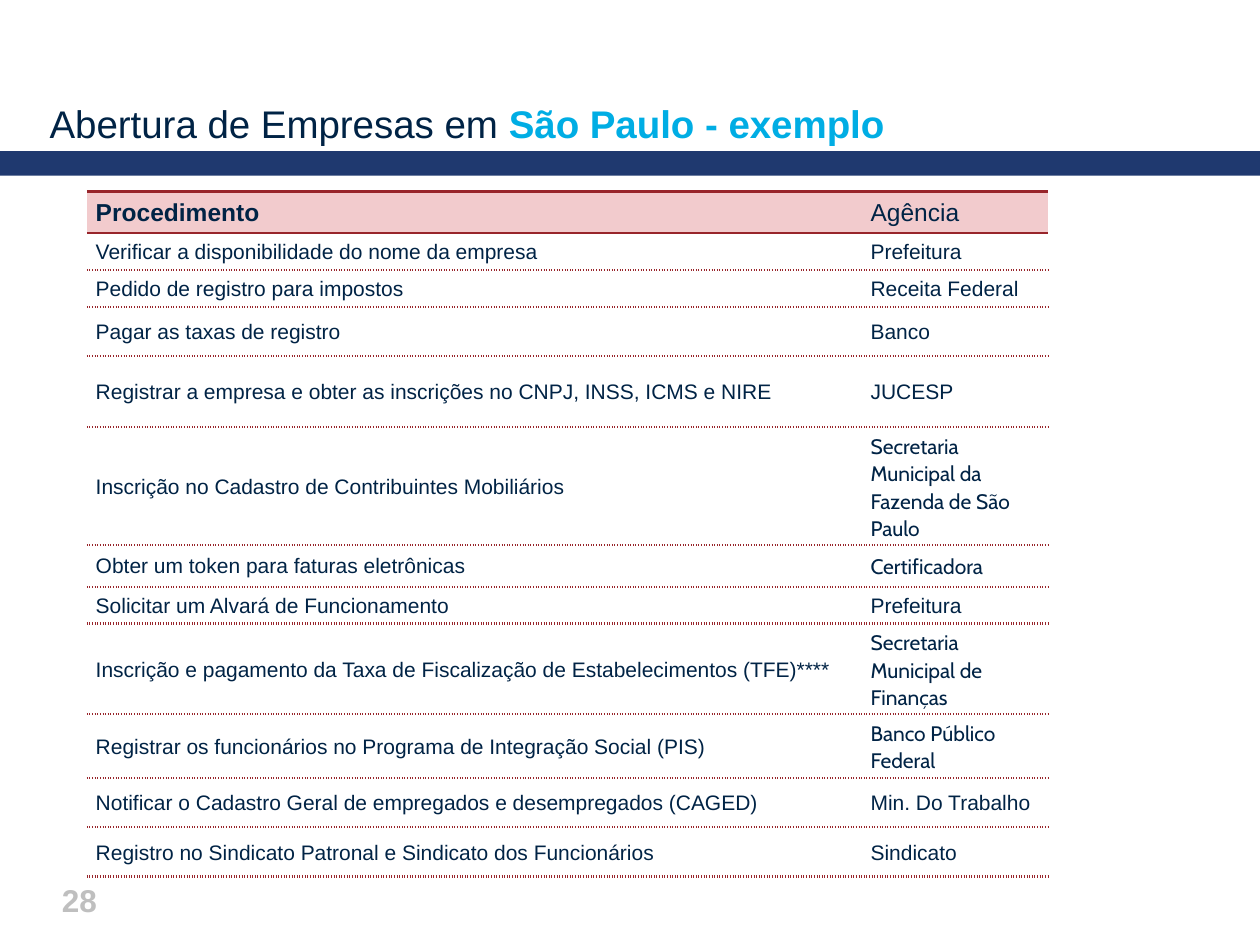
from dataclasses import dataclass

from lxml import etree
from pptx import Presentation
from pptx.dml.color import RGBColor
from pptx.enum import shapes, text
from pptx.oxml.ns import qn
from pptx.util import Cm, Pt


@dataclass(frozen=True)
class Theme:
    ink: str = "002345"
    accent: str = "00ADE4"
    bar: str = "1F396F"
    header_fill: str = "F2CBCD"
    rule: str = "98252B"
    muted: str = "BFBFBF"
    font: str = "Arial"
    alt_font: str = "Cabin"
    title_size: int = 22
    header_size: int = 14
    body_size: int = 12
    number_size: int = 18
    rule_width: float = 1.5


THEME = Theme()

# Procedure, agency, agency font, row height in cm
ROWS = [
    ("Procedimento", "Agência", THEME.font, 0.66),
    ("Verificar a disponibilidade do nome da empresa", "Prefeitura", THEME.font, 0.74),
    ("Pedido de registro para impostos", "Receita Federal", THEME.font, 0.58),
    ("Pagar as taxas de registro", "Banco", THEME.font, 0.99),
    ("Registrar a empresa e obter as inscrições no CNPJ, INSS, ICMS e NIRE",
     "JUCESP", THEME.font, 1.44),
    ("Inscrição no Cadastro de Contribuintes Mobiliários",
     "Secretaria Municipal da Fazenda de São Paulo", THEME.alt_font, 1.98),
    ("Obter um token para faturas eletrônicas", "Certificadora", THEME.alt_font, 0.84),
    ("Solicitar um Alvará de Funcionamento", "Prefeitura", THEME.font, 0.71),
    ("Inscrição e pagamento da Taxa de Fiscalização de Estabelecimentos (TFE)****",
     "Secretaria Municipal de Finanças", THEME.alt_font, 1.73),
    ("Registrar os funcionários no Programa de Integração Social (PIS)",
     "Banco Público Federal", THEME.alt_font, 1.07),
    ("Notificar o Cadastro Geral de empregados e desempregados (CAGED)",
     "Min. Do Trabalho", THEME.font, 0.99),
    ("Registro no Sindicato Patronal e Sindicato dos Funcionários",
     "Sindicato", THEME.font, 0.99),
]
COLUMN_SHARES = (0.806, 0.194)


def style_run(r, size, color, bold=False, font=THEME.font):
    r.font.name = font
    r.font.size = Pt(size)
    r.font.bold = bold
    r.font.color.rgb = RGBColor.from_string(color)


def add_bar(slide, x, y, w, h):
    sp = slide.shapes.add_shape(shapes.MSO_SHAPE.RECTANGLE, x, y, w, h)
    sp.shadow.inherit = False
    sp.fill.solid()
    sp.fill.fore_color.rgb = RGBColor.from_string(THEME.bar)
    sp.line.fill.background()


def fill_title(slide, x, y, w, h):
    sp = slide.shapes.title
    sp.left, sp.top, sp.width, sp.height = x, y, w, h
    tf = sp.text_frame
    tf.margin_left = tf.margin_right = tf.margin_top = tf.margin_bottom = 0
    tf.word_wrap = True
    tf.auto_size = text.MSO_AUTO_SIZE.NONE
    tf.vertical_anchor = text.MSO_ANCHOR.BOTTOM
    p = tf.paragraphs[0]
    p.alignment = text.PP_ALIGN.LEFT
    for words, color, bold in (("Abertura de Empresas em ", THEME.ink, False),
                               ("São Paulo - exemplo", THEME.accent, True)):
        r = p.add_run()
        r.text = words
        style_run(r, THEME.title_size, color, bold)


def add_page_number(slide, x, y, w, h):
    tf = slide.shapes.add_textbox(x, y, w, h).text_frame
    tf.word_wrap = True
    tf.text = "28"
    style_run(tf.paragraphs[0].runs[0], THEME.number_size, THEME.muted, True)


def set_borders(cell, top, bottom):
    """Rule the top and bottom with the given dash styles; leave the sides open."""
    tc_pr = cell._tc.get_or_add_tcPr()
    for side, dash in (("L", None), ("R", None), ("T", top), ("B", bottom)):
        ln = etree.SubElement(tc_pr, qn(f"a:ln{side}"))
        if dash is None:
            etree.SubElement(ln, qn("a:noFill"))
            continue
        ln.set("w", str(Pt(THEME.rule_width)))
        fill = etree.SubElement(ln, qn("a:solidFill"))
        etree.SubElement(fill, qn("a:srgbClr"), val=THEME.rule)
        etree.SubElement(ln, qn("a:prstDash"), val=dash)


def fill_cell(cell, words, font, row, col):
    is_header = row == 0
    set_borders(cell, "solid" if row <= 1 else "sysDot",
                "solid" if is_header else "sysDot")
    if is_header:
        cell.fill.solid()
        cell.fill.fore_color.rgb = RGBColor.from_string(THEME.header_fill)
    else:
        cell.fill.background()
    cell.vertical_anchor = text.MSO_ANCHOR.MIDDLE
    cell.margin_left = cell.margin_right = Cm(0.18)
    cell.margin_top = cell.margin_bottom = Cm(0.1)
    cell.text = words
    p = cell.text_frame.paragraphs[0]
    p.line_spacing = 1.07
    if col == 0 and not is_header:
        p.space_after = Pt(7.5)
    size = THEME.header_size if is_header else THEME.body_size
    style_run(p.runs[0], size, THEME.ink, is_header and col == 0, font)


def add_procedure_table(slide, x, y, w, h):
    table = slide.shapes.add_table(len(ROWS), len(COLUMN_SHARES), x, y, w, h).table
    table.first_row = table.horz_banding = False
    for column, share in zip(table.columns, COLUMN_SHARES):
        column.width = int(w * share)
    for i, (procedure, agency, agency_font, height) in enumerate(ROWS):
        table.rows[i].height = Cm(height)
        fill_cell(table.cell(i, 0), procedure, THEME.font, i, 0)
        fill_cell(table.cell(i, 1), agency, agency_font, i, 1)


def main():
    prs = Presentation()
    prs.slide_width, prs.slide_height = Cm(25.4), Cm(19.05)
    slide = prs.slides.add_slide(prs.slide_layouts[5])
    add_bar(slide, 0, Cm(3.05), prs.slide_width, Cm(0.49))
    fill_title(slide, Cm(1), Cm(0.84), Cm(23.5), Cm(2.1))
    add_page_number(slide, Cm(1), Cm(17.63), Cm(1.52), Cm(1))
    add_procedure_table(slide, Cm(1.75), Cm(3.86), Cm(19.38),
                        Cm(sum(row[-1] for row in ROWS)))
    prs.save("out.pptx")


if __name__ == "__main__":
    main()
